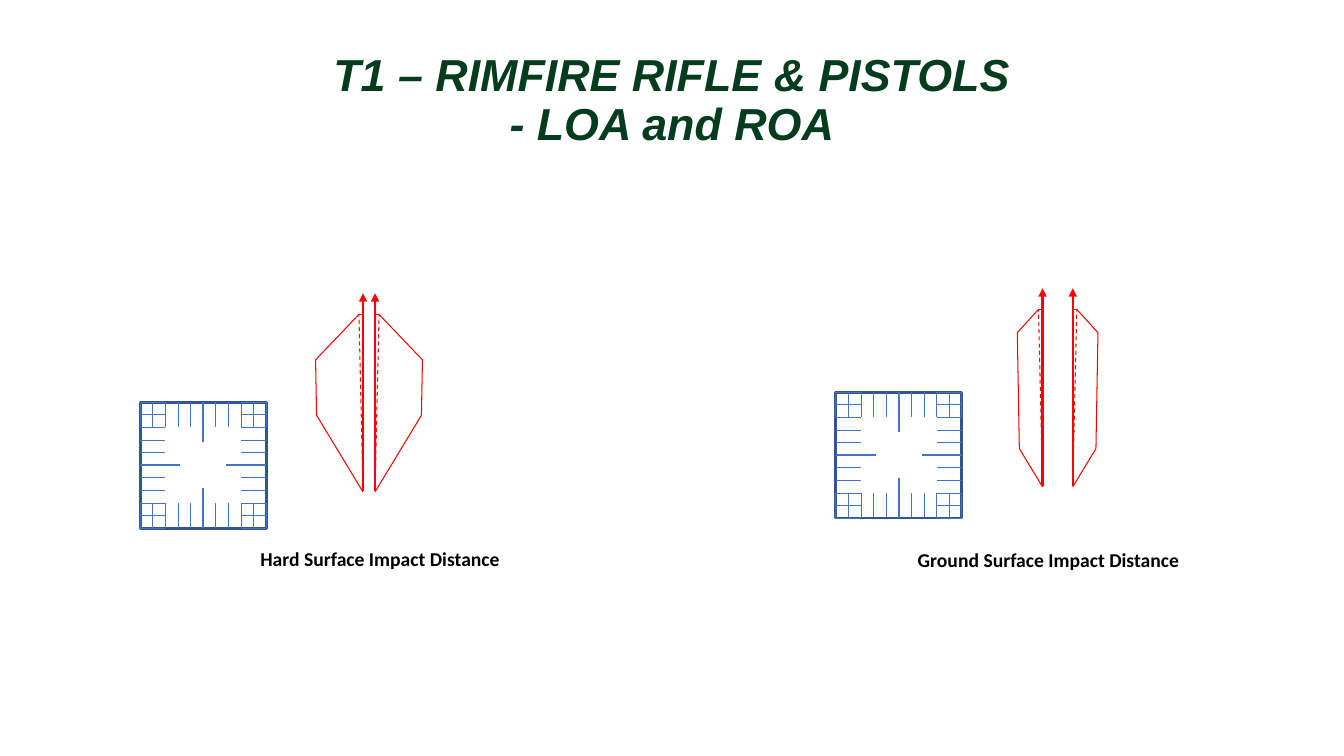
from pptx import Presentation, util as u
from pptx.dml.color import RGBColor
from pptx.enum import dml, shapes, text
from pptx.oxml.ns import qn
from lxml import etree

PX = 9144  # one px is a hundredth of an inch
RED, BLUE, NAVY, GREEN, BLACK = "FF0000", "4472C4", "325491", "053C1E", "000000"


def px(n):
    return u.Emu(round(n * PX))


def rgb(code):
    return RGBColor.from_string(code)


def add_line(parent, start, end, color, width, dashed=False, arrow=False):
    c = parent.shapes.add_connector(
        shapes.MSO_CONNECTOR.STRAIGHT, *(px(n) for n in (*start, *end)))
    c.line.color.rgb = rgb(color)
    c.line.width = u.Pt(width)
    if dashed:
        c.line.dash_style = dml.MSO_LINE.DASH
    sppr = c._element.spPr
    if arrow:
        etree.SubElement(sppr.find(qn("a:ln")), qn("a:tailEnd"), type="triangle")
    etree.SubElement(sppr, qn("a:effectLst"))


def add_title(s, box, lines):
    sp = s.shapes.title
    sp.left, sp.top, sp.width, sp.height = map(px, box)
    tf = sp.text_frame
    tf.text = "\n".join(lines)
    tf.word_wrap = True
    tf.auto_size = text.MSO_AUTO_SIZE.NONE
    tf.vertical_anchor = text.MSO_ANCHOR.MIDDLE
    for p in tf.paragraphs:
        p.alignment = text.PP_ALIGN.CENTER
        p.line_spacing = 0.9
        f = p.font
        f.name, f.size, f.bold, f.italic = "Arial", u.Pt(32), True, True
        f.color.rgb = rgb(GREEN)


def add_caption(s, box, wording):
    tf = s.shapes.add_textbox(*map(px, box)).text_frame
    tf.word_wrap = True
    tf.auto_size = text.MSO_AUTO_SIZE.SHAPE_TO_FIT_TEXT
    p = tf.paragraphs[0]
    p.text = wording
    p.alignment = text.PP_ALIGN.CENTER
    p.font.name, p.font.size, p.font.bold = "Calibri", u.Pt(14), True
    p.font.color.rgb = rgb(BLACK)


def add_grid_square(parent, left, top, size):
    sp = parent.shapes.add_shape(
        shapes.MSO_SHAPE.RECTANGLE, *map(px, (left, top, size, size)))
    sp.shadow.inherit = False
    sp.fill.background()
    sp.line.color.rgb = rgb(NAVY)
    sp.line.width = u.Pt(2)
    # Ten divisions a side, with a longer, heavier tick in the middle
    for i in range(11):
        length, width = (40, 1.75) if i == 5 else (25, 0.5)
        at = size * i / 10
        for edge, inner in ((0, length), (size, size - length)):
            add_line(parent, (left + edge, top + at),
                     (left + inner, top + at), BLUE, width)
            add_line(parent, (left + at, top + edge),
                     (left + at, top + inner), BLUE, width)


def add_danger_area(parent, center, top, half_gap, tip, shoulder, hip):
    """Two mirrored halves; points are (outward, down) from each arrow's head."""
    for side in (-1, 1):
        def at(point):
            return center + side * (half_gap + point[0]), top + point[1]

        add_line(parent, at((0, 196)), at((0, 0)), RED, 1.5, arrow=True)
        add_line(parent, at((0, 195)), at(tip), RED, 0.75, dashed=True)
        outline = [(0, tip[1]), tip, shoulder, hip, (0, 197)]
        for a, b in zip(outline, outline[1:]):
            add_line(parent, at(a), at(b), RED, 0.75)


def add_diagram(s, left, top, area):
    group = s.shapes.add_group_shape()
    add_grid_square(group, left, top + 108, 125)
    center, rise, *outline = area
    add_danger_area(group, left + center, top + rise, *outline)


def main():
    prs = Presentation()
    prs.slide_width, prs.slide_height = px(1333), px(750)
    s = prs.slides.add_slide(prs.slide_layouts[5])

    add_title(s, (0, 43, 1333, 115),
              ["T1 – RIMFIRE RIFLE & PISTOLS", "- LOA and ROA"])

    # Hard surface
    add_diagram(s, 139, 291, (227, 0, 6, (4, 21), (47, 66), (46, 121)))
    add_caption(s, (188, 538, 378, 34), "Hard Surface Impact Distance")

    # Ground surface
    add_diagram(s, 829, 281, (220, 5, 15, (4, 21), (25, 44), (23, 159)))
    add_caption(s, (851, 539, 378, 34), "Ground Surface Impact Distance")

    prs.save("out.pptx")


if __name__ == "__main__":
    main()
